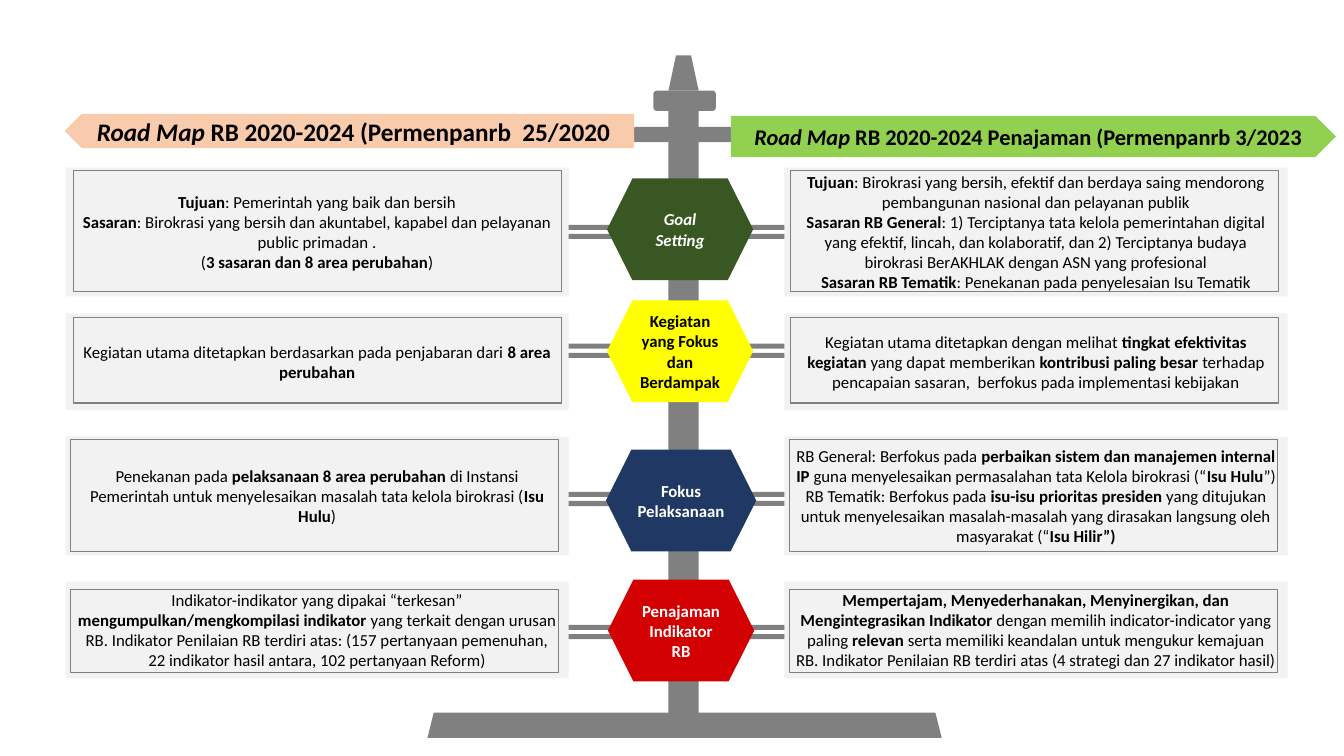
from pptx import Presentation
from pptx.dml.color import RGBColor
from pptx.enum.shapes import MSO_SHAPE as Shape
from pptx.enum.text import MSO_ANCHOR, PP_ALIGN
from pptx.util import Inches, Pt

COLORS = {
    "pole": "808080", "panel": "F2F2F2", "black": "000000", "white": "FFFFFF",
    "orange": "F8CBAD", "lime": "92D050", "green": "385723",
    "yellow": "FFFF00", "navy": "203864", "red": "D20000",
}

prs = Presentation()
prs.slide_width, prs.slide_height = Inches(13.33), Inches(7.5)
slide = prs.slides.add_slide(prs.slide_layouts[6])


def add_block(kind, left, top, width, height, fill=None):
    """Add a shape with a plain fill, or a grey outline when no fill is given."""
    block = slide.shapes.add_shape(
        kind, Inches(left), Inches(top), Inches(width), Inches(height))
    block.shadow.inherit = False
    if fill:
        block.fill.solid()
        block.fill.fore_color.rgb = RGBColor.from_string(COLORS[fill])
        block.line.fill.background()
    else:
        block.fill.background()
        block.line.color.rgb = RGBColor.from_string(COLORS["pole"])
        block.line.width = Pt(1)
    return block


def write(block, text, size=12, color="black", bold=None):
    """Write one centred paragraph per line; **x** is bold and __x__ is italic."""
    frame = block.text_frame
    frame.word_wrap = True
    frame.vertical_anchor = MSO_ANCHOR.MIDDLE
    for i, line in enumerate(text.split("\n")):
        paragraph = frame.paragraphs[0] if i == 0 else frame.add_paragraph()
        paragraph.alignment = PP_ALIGN.CENTER
        font = paragraph.font
        font.name, font.size, font.bold = "Calibri", Pt(size), bold
        font.color.rgb = RGBColor.from_string(COLORS[color])
        for j, bold_part in enumerate(line.split("**")):
            for k, part in enumerate(bold_part.split("__")):
                if part:
                    run = paragraph.add_run()
                    run.text = part
                    if j % 2:
                        run.font.bold = True
                    if k % 2:
                        run.font.italic = True


# Signpost: pole, crossbar and the paired rails behind each row
add_block(Shape.ROUND_1_RECTANGLE, 6.63, 1.03, 0.3, 6.06, "pole")
add_block(Shape.ROUNDED_RECTANGLE, 6.28, 1.26, 0.99, 0.15, "pole")
for rail_top in (2.23, 3.41, 4.88, 6.2):
    for offset in (0, 0.09):
        add_block(Shape.ROUNDED_RECTANGLE, 4.83, rail_top + offset, 3.88, 0.05, "pole")

# Direction signs
new_sign = add_block(Shape.PENTAGON, 7.25, 1.15, 6, 0.41, "lime")
write(new_sign, "__Road Map __RB 2020-2024 Penajaman (Permenpanrb 3/2023", 16, bold=True)
old_sign = add_block(Shape.PENTAGON, 0.64, 1.13, 5.65, 0.34, "orange")
old_sign._element.spPr.xfrm.set("flipH", "1")
write(old_sign, "__Road Map __RB 2020-2024 (Permenpanrb  25/2020", 18, bold=True)

# Each row: panel (top, height), frame (top, height), frame lefts,
# hexagon (left, top, width, fill, text colour, text), old and new policy
rows = [
    ((1.66, 1.28), (1.69, 1.2), (0.73, 7.84),
     (6.02, 1.77, 1.45, "green", "white", "__Goal Setting__"),
     "**Tujuan**: Pemerintah yang baik dan bersih\n"
     "**Sasaran**: Birokrasi yang bersih dan akuntabel, kapabel dan pelayanan "
     "public primadan .\n"
     "(**3 sasaran dan 8 area perubahan**)",
     "**Tujuan**: Birokrasi yang bersih, efektif dan berdaya saing mendorong "
     "pembangunan nasional dan pelayanan publik\n"
     "**Sasaran RB General**: 1) Terciptanya tata kelola pemerintahan digital yang "
     "efektif, lincah, dan kolaboratif, dan 2) Terciptanya budaya birokrasi "
     "BerAKHLAK dengan ASN yang profesional\n"
     "**Sasaran RB Tematik**: Penekanan pada penyelesaian Isu Tematik"),
    ((3.11, 0.96), (3.15, 0.85), (0.73, 7.84),
     (6.02, 2.98, 1.45, "yellow", "black", "Kegiatan yang Fokus dan Berdampak"),
     "Kegiatan utama ditetapkan berdasarkan pada penjabaran dari **8 area perubahan**",
     "Kegiatan utama ditetapkan dengan melihat **tingkat efektivitas kegiatan **yang "
     "dapat memberikan **kontribusi paling besar **terhadap pencapaian sasaran,  "
     "berfokus pada implementasi kebijakan"),
    ((4.33, 1.18), (4.36, 1.11), (0.7, 7.83),
     (6.01, 4.46, 1.49, "navy", "white", "Fokus Pelaksanaan"),
     "Penekanan pada **pelaksanaan 8 area perubahan **di Instansi Pemerintah untuk "
     "menyelesaikan masalah tata kelola birokrasi (**Isu Hulu**)",
     "RB General: Berfokus pada **perbaikan sistem dan manajemen internal IP **guna "
     "menyelesaikan permasalahan tata Kelola birokrasi (“**Isu Hulu**”)\n"
     "RB Tematik: Berfokus pada **isu-isu prioritas presiden** yang ditujukan untuk "
     "menyelesaikan masalah-masalah yang dirasakan langsung oleh masyarakat "
     "(“**Isu Hilir”)**"),
    ((5.77, 0.96), (5.85, 0.82), (0.7, 7.83),
     (6.03, 5.75, 1.45, "red", "white", "Penajaman Indikator RB"),
     "Indikator-indikator yang dipakai “terkesan” "
     "**mengumpulkan/mengkompilasi indikator** yang terkait dengan urusan RB. "
     "Indikator Penilaian RB terdiri atas: (157 pertanyaan pemenuhan, 22 indikator "
     "hasil antara, 102 pertanyaan Reform)",
     "**Mempertajam, Menyederhanakan, Menyinergikan, dan Mengintegrasikan Indikator "
     "**dengan memilih indicator-indicator yang paling **relevan **serta memiliki "
     "keandalan untuk mengukur kemajuan RB. Indikator Penilaian RB terdiri atas "
     "(4 strategi dan 27 indikator hasil)"),
]
for panel, frame_span, frame_lefts, topic, old_policy, new_policy in rows:
    for panel_left, frame_left, policy in zip(
            (0.65, 7.78), frame_lefts, (old_policy, new_policy)):
        write(add_block(Shape.RECTANGLE, panel_left, panel[0], 4.99, panel[1], "panel"),
              policy)
        add_block(Shape.RECTANGLE, frame_left, frame_span[0], 4.84, frame_span[1])
    left, top, width, fill, color, label = topic
    write(add_block(Shape.HEXAGON, left, top, width, 1.01, fill), label,
          color=color, bold=True)

# Base and tip of the pole
add_block(Shape.TRAPEZOID, 4.24, 7.07, 5.1, 0.25, "pole")
add_block(Shape.ROUNDED_RECTANGLE, 6.48, 0.9, 0.62, 0.2, "pole")
add_block(Shape.TRAPEZOID, 6.63, 0.55, 0.3, 0.35, "pole")

prs.save("out.pptx")
